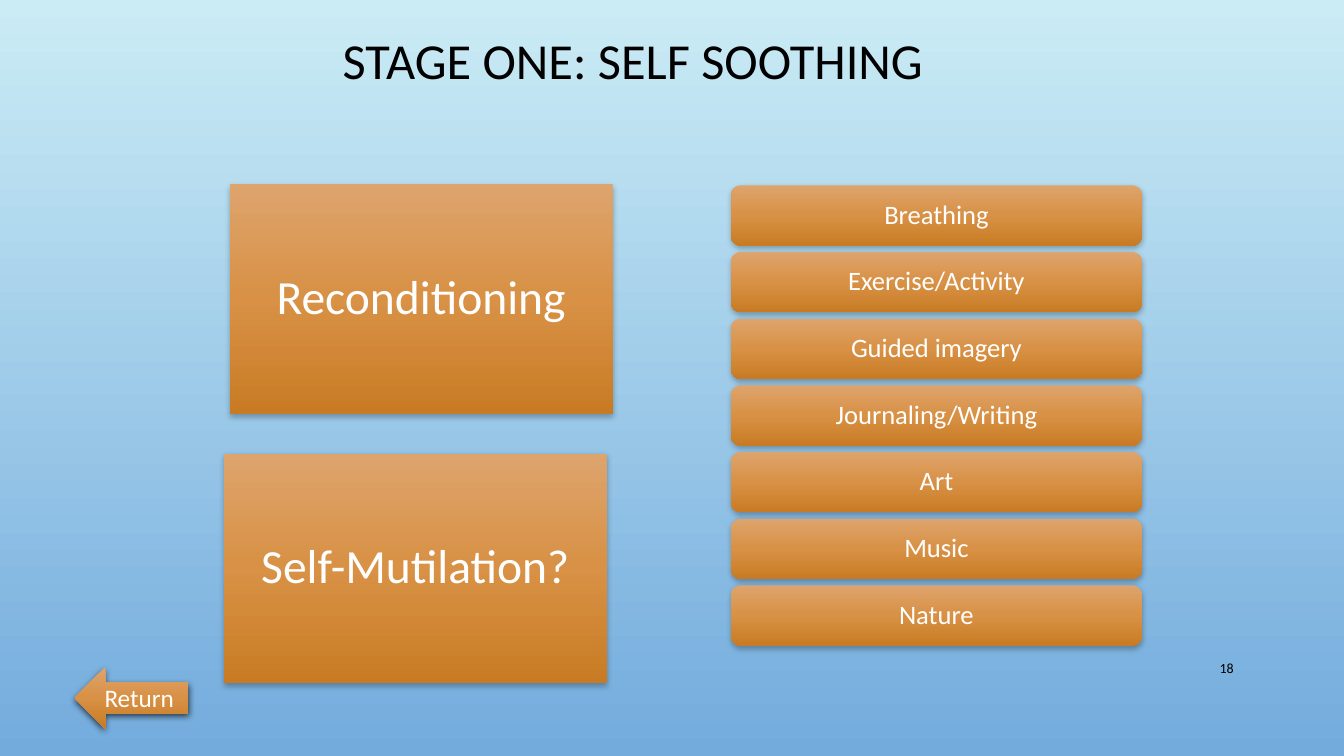
from copy import deepcopy

from lxml.etree import SubElement
from pptx import Presentation
from pptx.dml.color import RGBColor
from pptx.enum.shapes import MSO_SHAPE
from pptx.enum.text import MSO_ANCHOR, PP_ALIGN
from pptx.oxml.ns import qn
from pptx.util import Cm, Pt

BLACK = RGBColor(0x00, 0x00, 0x00)
WHITE = RGBColor(0xFF, 0xFF, 0xFF)
SKY = [RGBColor(0xCB, 0xEC, 0xF5), RGBColor(0x73, 0xAB, 0xDD)]
ORANGE = [RGBColor(0xDE, 0xA4, 0x6D), RGBColor(0xD8, 0x91, 0x45), RGBColor(0xC8, 0x7B, 0x23)]

TITLE = {"size": Pt(36), "color": BLACK, "spacing": 0.9}
NUMBER = {"size": Pt(10), "color": BLACK, "align": PP_ALIGN.RIGHT}
CARD = {"size": Pt(34), "color": WHITE, "spacing": 0.9, "inset": Cm(0.36)}
PILL = {"size": Pt(19), "color": WHITE, "spacing": 0.9, "inset": Cm(0.2)}
RETURN = {"size": Pt(18), "color": WHITE, "wrap": False}
SOFT_SHADOW = {"alpha": 28, "blur": 4, "distance": 2}
STRONG_SHADOW = {"alpha": 69, "blur": 5, "distance": 2}

CARDS = [("Reconditioning", 5.79, 4.65), ("Self-Mutilation?", 5.64, 11.43)]
TECHNIQUES = ["Breathing", "Exercise/Activity", "Guided imagery", "Journaling/Writing",
              "Art", "Music", "Nature"]
PILL_TOP, PILL_PITCH = 4.67, 1.68


def paint_gradient(fill, element, colors):
    """Fill from top to bottom with evenly spaced colours; element holds the fill."""
    fill.gradient()
    fill.gradient_angle = 270
    stop_list = element.find(".//" + qn("a:gsLst"))
    while len(stop_list) < len(colors):
        stop_list.append(deepcopy(stop_list[-1]))
    for index, (stop, color) in enumerate(zip(fill.gradient_stops, colors)):
        stop.position = index / (len(colors) - 1)
        stop.color.rgb = color


def add_shadow(shape, alpha, blur, distance):
    shape.shadow.inherit = False
    effects = shape.element.spPr.find(qn("a:effectLst"))
    shadow = SubElement(effects, qn("a:outerShdw"), blurRad=str(Pt(blur)),
                        dist=str(Pt(distance)), dir="5400000", rotWithShape="0")
    color = SubElement(shadow, qn("a:srgbClr"), val=str(BLACK))
    SubElement(color, qn("a:alpha"), val=str(alpha * 1000))


def write_text(shape, text, style):
    frame = shape.text_frame
    frame.word_wrap = style.get("wrap", True)
    frame.vertical_anchor = MSO_ANCHOR.MIDDLE
    if "inset" in style:
        for side in ("left", "top", "right", "bottom"):
            setattr(frame, f"margin_{side}", style["inset"])
    paragraph = frame.paragraphs[0]
    paragraph.text = text
    paragraph.alignment = style.get("align", PP_ALIGN.CENTER)
    paragraph.line_spacing = style.get("spacing", 1.0)
    for name, value in {"name": "Calibri", "size": style["size"]}.items():
        setattr(paragraph.font, name, value)
    paragraph.font.color.rgb = style["color"]


def add_label(slide, text, box, style):
    label = slide.shapes.add_textbox(*map(Cm, box))
    write_text(label, text, style)


def add_block(slide, kind, text, box, style, shadow=SOFT_SHADOW):
    """Add an orange shape with a shadow and centred white text."""
    block = slide.shapes.add_shape(kind, *map(Cm, box))
    paint_gradient(block.fill, block.element, ORANGE)
    block.line.fill.background()
    add_shadow(block, **shadow)
    write_text(block, text, style)


def main():
    presentation = Presentation()
    presentation.slide_width, presentation.slide_height = Cm(33.87), Cm(19.05)
    slide = presentation.slides.add_slide(presentation.slide_layouts[6])
    paint_gradient(slide.background.fill, slide.element, SKY)

    add_label(slide, "STAGE ONE: SELF SOOTHING", (1.88, 0.76, 28.14, 1.68), TITLE)
    for text, left, top in CARDS:
        add_block(slide, MSO_SHAPE.RECTANGLE, text, (left, top, 9.65, 5.79), CARD)
    for index, text in enumerate(TECHNIQUES):
        box = (18.42, PILL_TOP + index * PILL_PITCH, 10.36, 1.52)
        add_block(slide, MSO_SHAPE.ROUNDED_RECTANGLE, text, box, PILL)
    add_block(slide, MSO_SHAPE.LEFT_ARROW, "Return", (1.88, 16.81, 2.87, 1.55),
              RETURN, STRONG_SHADOW)
    add_label(slide, "18", (29.21, 16.33, 2.13, 1.02), NUMBER)

    presentation.save("out.pptx")


if __name__ == "__main__":
    main()
